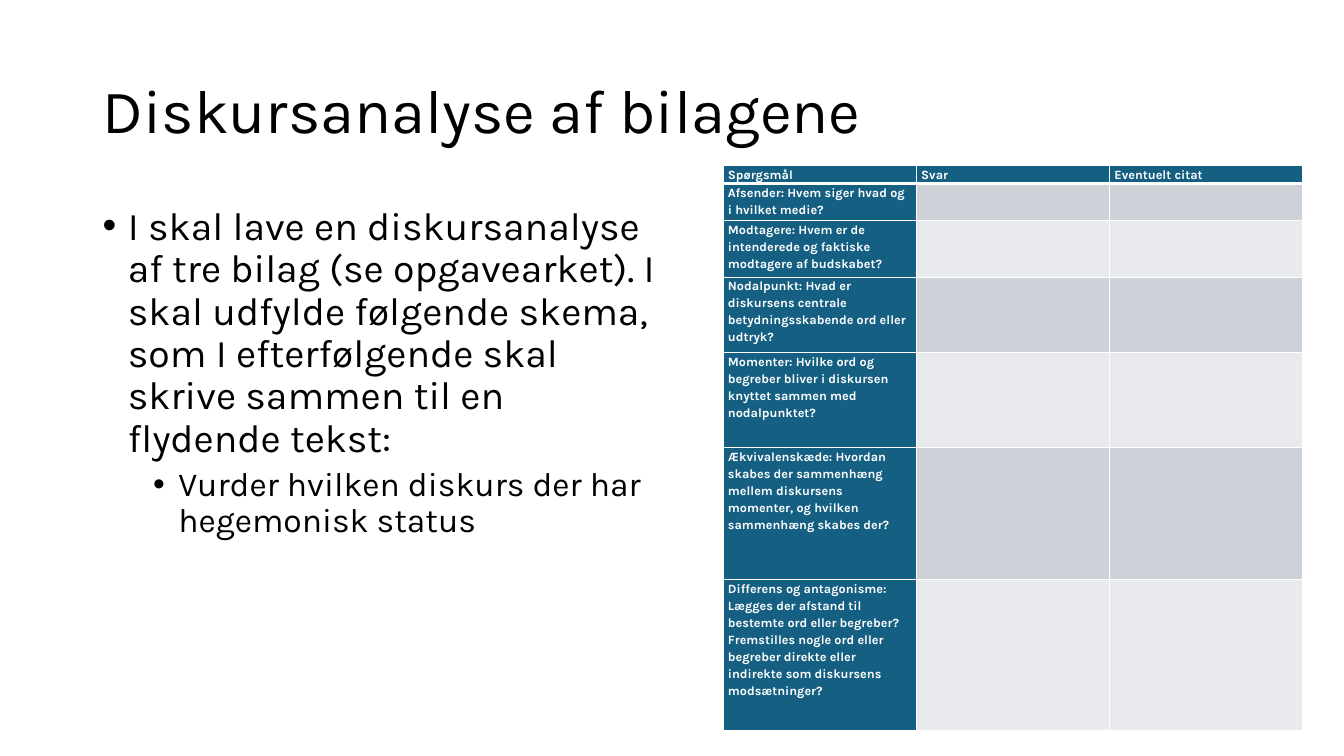
from dataclasses import dataclass

from lxml import etree
from pptx import Presentation
from pptx.dml.color import RGBColor
from pptx.enum.text import MSO_ANCHOR
from pptx.oxml.ns import qn
from pptx.util import Inches, Pt

MIDDLE = MSO_ANCHOR.MIDDLE
TOP = MSO_ANCHOR.TOP


@dataclass(frozen=True)
class Theme:
    font: str = "Karla"
    ink: str = "000000"
    white: str = "FFFFFF"
    head: str = "156082"
    bands: tuple = ("CCD2D8", "E8EAED")
    title: int = 44
    body: tuple = (28, 24)
    small: int = 9


class Deck:
    def __init__(self, slide, theme):
        self.slide = slide
        self.theme = theme

    def style(self, para, size, color, bold=False):
        for run in para.runs:
            run.font.name = self.theme.font
            run.font.size = Pt(size)
            run.font.bold = bold
            run.font.color.rgb = RGBColor.from_string(color)

    def box(self, left, top, width, height, anchor):
        shape = self.slide.shapes.add_textbox(
            Inches(left), Inches(top), Inches(width), Inches(height))
        frame = shape.text_frame
        frame.word_wrap = True
        frame.vertical_anchor = anchor
        return frame

    def title(self, text, *place):
        frame = self.box(*place, MIDDLE)
        frame.text = text
        para = frame.paragraphs[0]
        para.line_spacing = 0.9
        self.style(para, self.theme.title, self.theme.ink)

    def bullets(self, texts, *place):
        frame = self.box(*place, TOP)
        frame.text = "\n".join(texts)
        for level, para in enumerate(frame.paragraphs):
            props = para._p.get_or_add_pPr()
            props.set("marL", str(Inches(0.25 + 0.5 * level)))
            props.set("indent", str(Inches(-0.25)))
            etree.SubElement(props, qn("a:buFont")).set("typeface", "Arial")
            etree.SubElement(props, qn("a:buChar")).set("char", "•")
            para.level = level
            para.line_spacing = 0.9
            para.space_before = Pt(5 if level else 0)
            self.style(para, self.theme.body[level], self.theme.ink)

    def border(self, cell, side, width):
        line = etree.SubElement(cell._tc.get_or_add_tcPr(), qn(f"a:ln{side}"))
        line.set("w", str(Pt(width)))
        fill = etree.SubElement(line, qn("a:solidFill"))
        etree.SubElement(fill, qn("a:srgbClr")).set("val", self.theme.white)

    def cell(self, cell, row, col, text):
        cell.margin_left = cell.margin_right = Inches(0.05)
        cell.margin_top = cell.margin_bottom = 0
        for side in "LRTB":
            thick = (row, side) in ((0, "B"), (1, "T"))
            self.border(cell, side, 3 if thick else 1)
        dark = row == 0 or col == 0
        color = self.theme.head if dark else self.theme.bands[(row - 1) % 2]
        cell.fill.solid()
        cell.fill.fore_color.rgb = RGBColor.from_string(color)
        if text:
            cell.text_frame.text = text
            para = cell.text_frame.paragraphs[0]
            para.line_spacing = 1.15
            para.space_after = Pt(8)
            self.style(para, self.theme.small, self.theme.white, True)

    def table(self, heads, asks, highs, left, top, width):
        rows = [heads] + [(ask, "", "") for ask in asks]
        table = self.slide.shapes.add_table(
            len(rows), len(heads), Inches(left), Inches(top),
            Inches(width), Inches(sum(highs))).table
        for row, (texts, high) in enumerate(zip(rows, highs)):
            table.rows[row].height = Inches(high)
            for col, text in enumerate(texts):
                self.cell(table.cell(row, col), row, col, text)


HEADS = ("Spørgsmål", "Svar", "Eventuelt citat")
ASKS = (
    "Afsender: Hvem siger hvad og i hvilket medie?",
    "Modtagere: Hvem er de intenderede og faktiske modtagere af budskabet?",
    "Nodalpunkt: Hvad er diskursens centrale betydningsskabende ord eller udtryk?",
    "Momenter: Hvilke ord og begreber bliver i diskursen knyttet sammen med nodalpunktet?",
    "Ækvivalenskæde: Hvordan skabes der sammenhæng mellem diskursens momenter, "
    "og hvilken sammenhæng skabes der?",
    "Differens og antagonisme: Lægges der afstand til bestemte ord eller begreber? "
    "Fremstilles nogle ord eller begreber direkte eller indirekte som diskursens modsætninger?",
)
HIGHS = (0.18, 0.37, 0.56, 0.75, 0.94, 1.31, 1.5)
TASKS = (
    "I skal lave en diskursanalyse af tre bilag (se opgavearket). I skal udfylde "
    "følgende skema, som I efterfølgende skal skrive sammen til en flydende tekst:",
    "Vurder hvilken diskurs der har hegemonisk status",
)


def main():
    show = Presentation()
    show.slide_width = Inches(13.33)
    show.slide_height = Inches(7.5)
    deck = Deck(show.slides.add_slide(show.slide_layouts[6]), Theme())
    deck.title("Diskursanalyse af bilagene", 0.92, 0.4, 11.5, 1.45)
    deck.bullets(TASKS, 0.92, 2, 5.75, 4.76)
    deck.table(HEADS, ASKS, HIGHS, 7.17, 1.64, 5.75)
    show.save("out.pptx")


if __name__ == "__main__":
    main()
